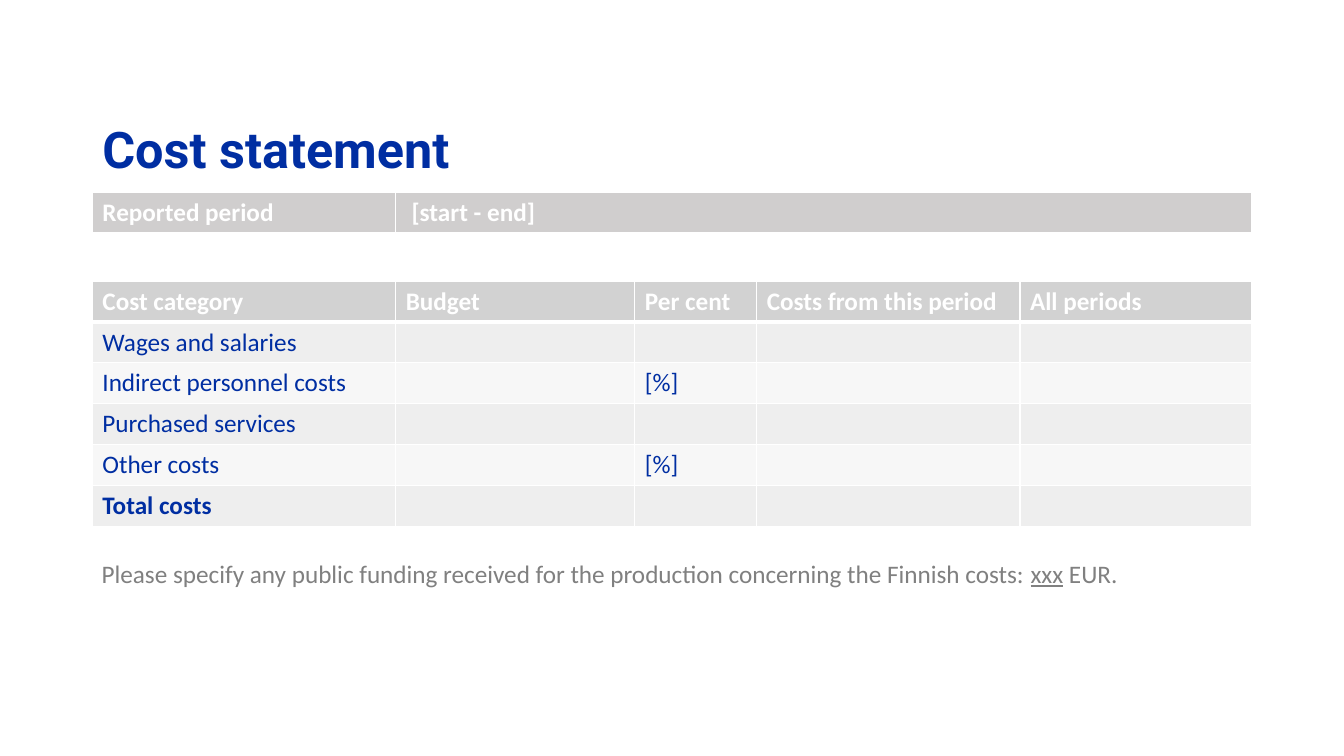
from lxml import etree
from pptx import Presentation
from pptx.dml.color import RGBColor
from pptx.enum import text
from pptx.oxml import ns
from pptx.util import Pt

theme = {
    "blue": "002EA2", "white": "FFFFFF", "gray": "808080",
    "head": "D2D2D2", "span": "D0CECE", "bands": ["EEEEEE", "F7F7F7"],
    "body": "Calibri", "title": "Roboto", "size": 18, "large": 36,
}


def style(run, color, bold=False, face=theme["body"], size=theme["size"]):
    font = run.font
    font.name, font.size, font.bold = face, Pt(size), bold
    font.color.rgb = RGBColor.from_string(color)


def draw(cell, fill, top, low):
    props = cell._tc.get_or_add_tcPr()
    for side, width in (("L", 1), ("R", 1), ("T", top), ("B", low)):
        line = etree.SubElement(props, ns.qn(f"a:ln{side}"), w=str(Pt(width)))
        paint = etree.SubElement(line, ns.qn("a:solidFill"))
        etree.SubElement(paint, ns.qn("a:srgbClr"), val=theme["white"])
    cell.fill.solid()
    cell.fill.fore_color.rgb = RGBColor.from_string(fill)


deck = Presentation()
deck.slide_width, deck.slide_height = Pt(960), Pt(540)
slide = deck.slides.add_slide(deck.slide_layouts[6])

left, wide, high = 66, 828, 29.2

title = slide.shapes.add_textbox(Pt(left), Pt(82.8), Pt(wide), Pt(54.7)).text_frame
title.word_wrap = True
title.vertical_anchor = text.MSO_ANCHOR.MIDDLE
title.text = "Cost statement"
title.paragraphs[0].line_spacing = 0.8
style(title.paragraphs[0].runs[0], theme["blue"], True, theme["title"], theme["large"])

period = [["Reported period", "[start - end]"]]
costs = [
    ["Cost category", "Budget", "Per cent", "Costs from this period", "All periods"],
    ["Wages and salaries", "", "", "", ""],
    ["Indirect personnel costs", "", "[%]", "", ""],
    ["Purchased services", "", "", "", ""],
    ["Other costs", "", "[%]", "", ""],
    ["Total costs", "", "", "", ""],
]
tables = [
    (costs, 200.8, [216.7, 170.8, 87.1, 188, 165.4], theme["head"]),
    (period, 137.6, [216.7, 611.3], theme["span"]),
]

for rows, top, widths, shade in tables:
    frame = slide.shapes.add_table(
        len(rows), len(widths), Pt(left), Pt(top), Pt(wide), Pt(high * len(rows)))
    grid = frame.table
    for col, width in zip(grid.columns, widths):
        col.width = Pt(width)
    for i, row in enumerate(rows):
        grid.rows[i].height = Pt(high)
        fill = theme["bands"][(i - 1) % 2] if i else shade
        color = theme["blue"] if i else theme["white"]
        for j, label in enumerate(row):
            cell = grid.cell(i, j)
            draw(cell, fill, 3 if i == 1 else 1, 1 if i else 3)
            cell.text = label
            for run in cell.text_frame.paragraphs[0].runs:
                style(run, color, i == 0 or label == "Total costs")
    if rows is period:
        grid.cell(0, 1).margin_left = Pt(11.3)

note = slide.shapes.add_textbox(Pt(65.5), Pt(395.3), Pt(756.7), Pt(29)).text_frame
note.word_wrap = False
note.auto_size = text.MSO_AUTO_SIZE.SHAPE_TO_FIT_TEXT
parts = [
    "Please specify any public funding received for the production concerning the Finnish costs: ",
    "xxx", " EUR.",
]
for part in parts:
    run = note.paragraphs[0].add_run()
    run.text = part
    style(run, theme["gray"])
    run.font.underline = part == "xxx"

deck.save("out.pptx")
